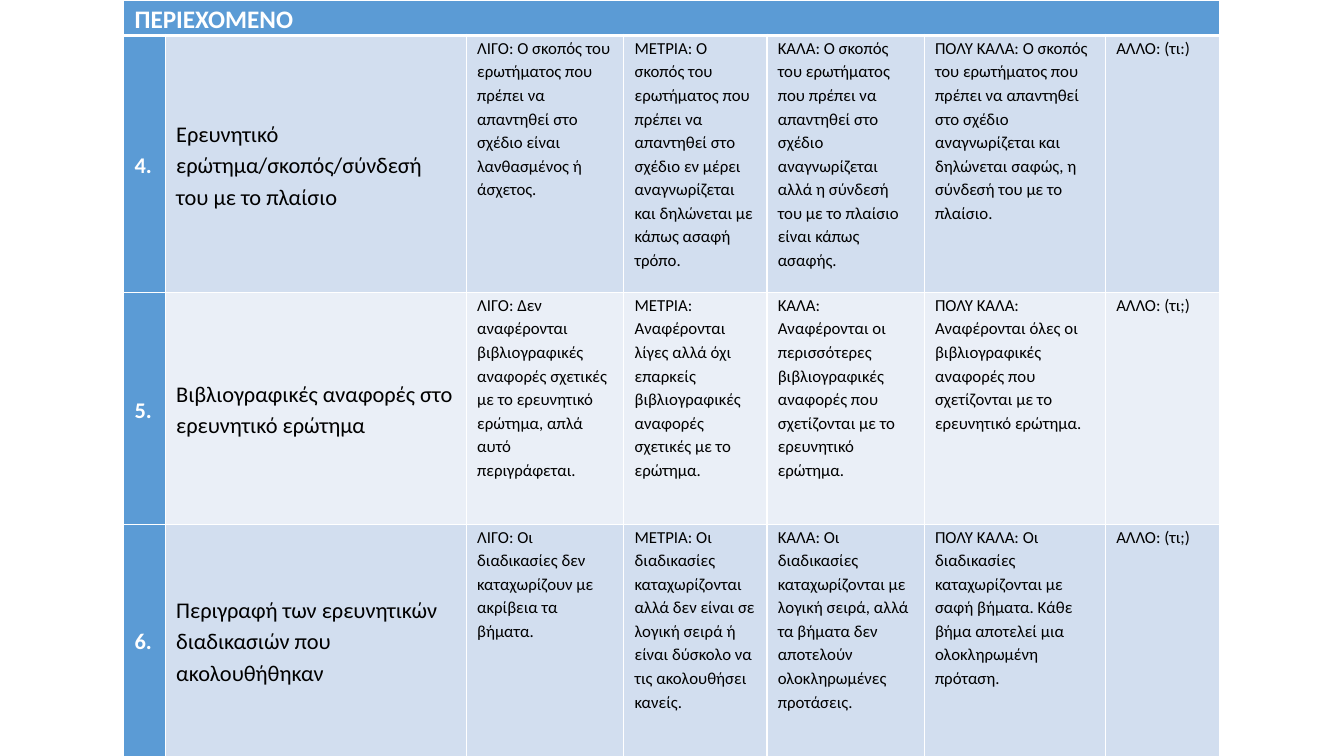
from dataclasses import dataclass

from lxml import etree
from pptx import Presentation
from pptx import util as u
from pptx.dml.color import RGBColor
from pptx.enum import text
from pptx.oxml import ns


@dataclass(frozen=True)
class Theme:
    font: str = "Calibri"
    white: str = "FFFFFF"
    black: str = "000000"
    accent: str = "5B9BD5"
    bands: tuple = ("D2DEEF", "EAEFF7")
    heading: int = 18
    criterion: int = 16
    body: int = 12
    line: int = 1
    heading_line: int = 3


class RubricSlide:
    def __init__(self, prs, theme):
        self.theme = theme
        self.slide = prs.slides.add_slide(prs.slide_layouts[6])

    def table(self, left, top, widths, heights):
        frame = self.slide.shapes.add_table(
            len(heights), len(widths), u.Pt(left), u.Pt(top),
            u.Pt(sum(widths)), u.Pt(sum(heights)))
        tbl = frame.table
        for col, width in zip(tbl.columns, widths):
            col.width = u.Pt(width)
        for row, height in zip(tbl.rows, heights):
            row.height = u.Pt(height)
        return tbl

    def borders(self, cell, top, bottom):
        tc_pr = cell._tc.get_or_add_tcPr()
        line = self.theme.line
        for side, width in (("L", line), ("R", line), ("T", top), ("B", bottom)):
            ln = etree.SubElement(tc_pr, ns.qn(f"a:ln{side}"), w=str(u.Pt(width)))
            fill = etree.SubElement(ln, ns.qn("a:solidFill"))
            etree.SubElement(fill, ns.qn("a:srgbClr"), val=self.theme.white)

    def cell(self, cell, content, fill, size, color, bold=False, middle=True,
             top=None, bottom=None):
        self.borders(cell, top or self.theme.line, bottom or self.theme.line)
        cell.fill.solid()
        cell.fill.fore_color.rgb = RGBColor.from_string(fill)
        cell.margin_left = cell.margin_right = u.Pt(7.7)
        cell.margin_top = cell.margin_bottom = 0
        anchor = text.MSO_ANCHOR
        cell.vertical_anchor = anchor.MIDDLE if middle else anchor.TOP
        tf = cell.text_frame
        tf.text = content
        p = tf.paragraphs[0]
        p.line_spacing = 1.15
        p.space_after = u.Pt(10)
        for r in p.runs:
            r.font.name = self.theme.font
            r.font.size = u.Pt(size)
            r.font.bold = bold
            r.font.color.rgb = RGBColor.from_string(color)

    def heading(self, tbl, title):
        th = self.theme
        cells = list(tbl.rows[0].cells)
        cells[0].merge(cells[-1])
        for i, cell in enumerate(cells):
            self.cell(cell, "" if i else title, th.accent, th.heading, th.white,
                      bold=True, bottom=th.heading_line)

    def criterion(self, tbl, row, number, name, levels):
        th = self.theme
        band = th.bands[(row - 1) % 2]
        top = th.heading_line if row == 1 else th.line
        number_cell, name_cell, *level_cells = tbl.rows[row].cells
        self.cell(number_cell, number, th.accent, th.criterion, th.white,
                  bold=True, top=top)
        self.cell(name_cell, name, band, th.criterion, th.black, top=top)
        for cell, level in zip(level_cells, levels):
            self.cell(cell, level, band, th.body, th.black, middle=False, top=top)


CRITERIA = [
    ("4.", "Ερευνητικό ερώτημα/σκοπός/σύνδεσή του με το πλαίσιο", [
        "ΛΙΓΟ: Ο σκοπός του ερωτήματος που πρέπει να απαντηθεί στο σχέδιο "
        "είναι λανθασμένος ή άσχετος.",
        "ΜΕΤΡΙΑ: Ο σκοπός του ερωτήματος που πρέπει να απαντηθεί στο σχέδιο "
        "εν μέρει αναγνωρίζεται και δηλώνεται με κάπως ασαφή τρόπο.",
        "ΚΑΛΑ: Ο σκοπός του ερωτήματος που πρέπει να απαντηθεί στο σχέδιο "
        "αναγνωρίζεται αλλά η σύνδεσή του με το πλαίσιο είναι κάπως ασαφής.",
        "ΠΟΛΥ ΚΑΛΑ: Ο σκοπός του ερωτήματος που πρέπει να απαντηθεί στο σχέδιο "
        "αναγνωρίζεται και δηλώνεται σαφώς, η σύνδεσή του με το πλαίσιο.",
        "ΑΛΛΟ: (τι:)",
    ]),
    ("5.", "Βιβλιογραφικές αναφορές στο ερευνητικό ερώτημα", [
        "ΛΙΓΟ: Δεν αναφέρονται βιβλιογραφικές αναφορές σχετικές με το "
        "ερευνητικό ερώτημα, απλά αυτό περιγράφεται.",
        "ΜΕΤΡΙΑ: Αναφέρονται λίγες αλλά όχι επαρκείς βιβλιογραφικές αναφορές "
        "σχετικές με το ερώτημα.",
        "ΚΑΛΑ: Αναφέρονται οι περισσότερες βιβλιογραφικές αναφορές που "
        "σχετίζονται με το ερευνητικό ερώτημα.",
        "ΠΟΛΥ ΚΑΛΑ: Αναφέρονται όλες οι βιβλιογραφικές αναφορές που "
        "σχετίζονται με το ερευνητικό ερώτημα.",
        "ΑΛΛΟ: (τι;)",
    ]),
    ("6.", "Περιγραφή των ερευνητικών διαδικασιών που ακολουθήθηκαν", [
        "ΛΙΓΟ: Οι διαδικασίες δεν καταχωρίζουν με ακρίβεια τα βήματα.",
        "ΜΕΤΡΙΑ: Οι διαδικασίες καταχωρίζονται αλλά δεν είναι σε λογική σειρά "
        "ή είναι δύσκολο να τις ακολουθήσει κανείς.",
        "ΚΑΛΑ: Οι διαδικασίες καταχωρίζονται με λογική σειρά, αλλά τα βήματα "
        "δεν αποτελούν ολοκληρωμένες προτάσεις.",
        "ΠΟΛΥ ΚΑΛΑ: Οι διαδικασίες καταχωρίζονται με σαφή βήματα. Κάθε βήμα "
        "αποτελεί μια ολοκληρωμένη πρόταση.",
        "ΑΛΛΟ: (τι;)",
    ]),
]


def main():
    prs = Presentation()
    prs.slide_width, prs.slide_height = u.Pt(960), u.Pt(540)
    rubric = RubricSlide(prs, Theme())
    tbl = rubric.table(88.5, 0, [29.7, 215, 112.5, 102.3, 112.3, 129.5, 81.3],
                       [24.5, 183.6, 165.6, 165.6])
    rubric.heading(tbl, "ΠΕΡΙΕΧΟΜΕΝΟ")
    for row, (number, name, levels) in enumerate(CRITERIA, 1):
        rubric.criterion(tbl, row, number, name, levels)
    prs.save("out.pptx")


if __name__ == "__main__":
    main()
